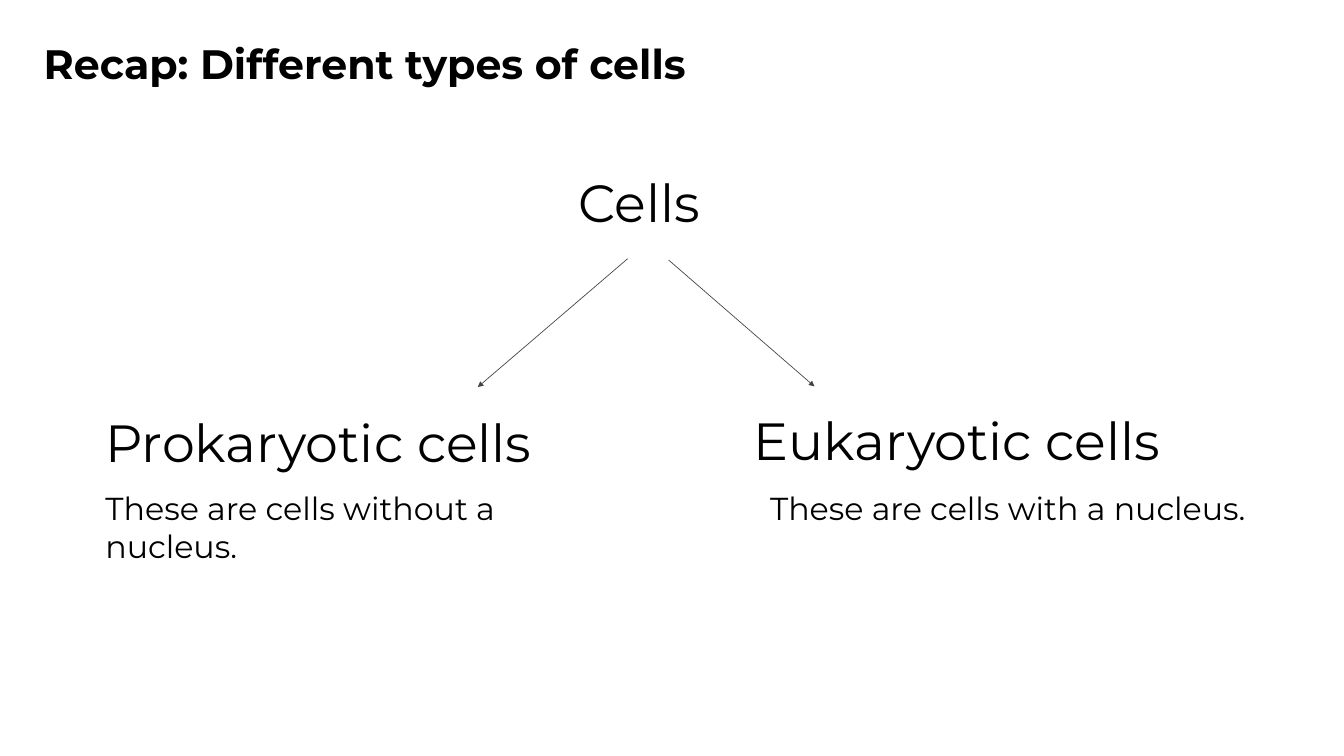
from dataclasses import dataclass

from lxml.etree import SubElement
from pptx import Presentation
from pptx.dml.color import RGBColor as Color
from pptx.enum.shapes import MSO_CONNECTOR as Link
from pptx.enum.text import MSO_ANCHOR as Anchor, MSO_AUTO_SIZE as Fit, PP_ALIGN as Align
from pptx.oxml.ns import qn
from pptx.util import Inches, Pt


@dataclass(frozen=True)
class Theme:
    """Holds the colours, font and type sizes of the slide."""
    face: str = "Montserrat"
    ink: Color = Color(0, 0, 0)
    line: Color = Color(0x43, 0x43, 0x43)
    title: int = 44
    head: int = 56
    body: int = 34


THEME = Theme()


def set_all(item, values):
    """Set each named attribute on the item."""
    for name, value in values.items():
        setattr(item, name, value)


def set_text(shape, box, text, size, inset=0.2, bold=False, lead=1.0):
    """Place a shape and fill it with one formatted paragraph."""
    sides = ("left", "top", "width", "height")
    set_all(shape, {side: Inches(size) for side, size in zip(sides, box)})
    frame = shape.text_frame
    frame.text = text
    pad = Inches(inset)
    set_all(frame, {
        "word_wrap": True, "auto_size": Fit.NONE, "vertical_anchor": Anchor.TOP,
        "margin_left": pad, "margin_top": pad, "margin_right": pad, "margin_bottom": pad,
    })
    para = frame.paragraphs[0]
    set_all(para, {"alignment": Align.LEFT, "line_spacing": lead})
    set_all(para.font, {"name": THEME.face, "size": Pt(size), "bold": bold})
    para.font.color.rgb = THEME.ink


def add_text(slide, box, text, size):
    """Add a text box with one paragraph."""
    shape = slide.shapes.add_textbox(0, 0, 0, 0)
    set_text(shape, box, text, size)


def add_arrow(slide, start, end):
    """Add a thin straight arrow from start to end."""
    ends = [Inches(value) for value in (*start, *end)]
    arrow = slide.shapes.add_connector(Link.STRAIGHT, *ends)
    arrow.line.color.rgb = THEME.line
    arrow.line.width = Pt(0.75)
    SubElement(arrow.line._get_or_add_ln(), qn("a:tailEnd"), type="triangle")
    SubElement(arrow._element.spPr, qn("a:effectLst"))


def main():
    """Build the cell types slide and save it."""
    deck = Presentation()
    set_all(deck, {"slide_width": Inches(20), "slide_height": Inches(11.25)})
    slide = deck.slides.add_slide(deck.slide_layouts[5])
    set_text(slide.shapes.title, (0.65, 0.46, 17.99, 1.04),
             "Recap: Different types of cells", THEME.title, inset=0, bold=True, lead=1.15)

    add_text(slide, (8.41, 2.34, 4.39, 1.2), "Cells", THEME.head)
    add_arrow(slide, (9.34, 3.85), (7.11, 5.76))
    add_arrow(slide, (9.95, 3.87), (12.12, 5.75))

    kinds = [
        ("Prokaryotic cells", (1.37, 5.91), "These are cells without a nucleus.", (1.37, 7.6)),
        ("Eukaryotic cells", (11.02, 5.88), "These are cells with a nucleus.", (11.26, 8.27)),
    ]
    for name, spot, note, (left, width) in kinds:
        add_text(slide, (*spot, 7.03, 1.2), name, THEME.head)
        add_text(slide, (left, 7.08, width, 1.67), note, THEME.body)
    deck.save("out.pptx")


if __name__ == "__main__":
    main()
